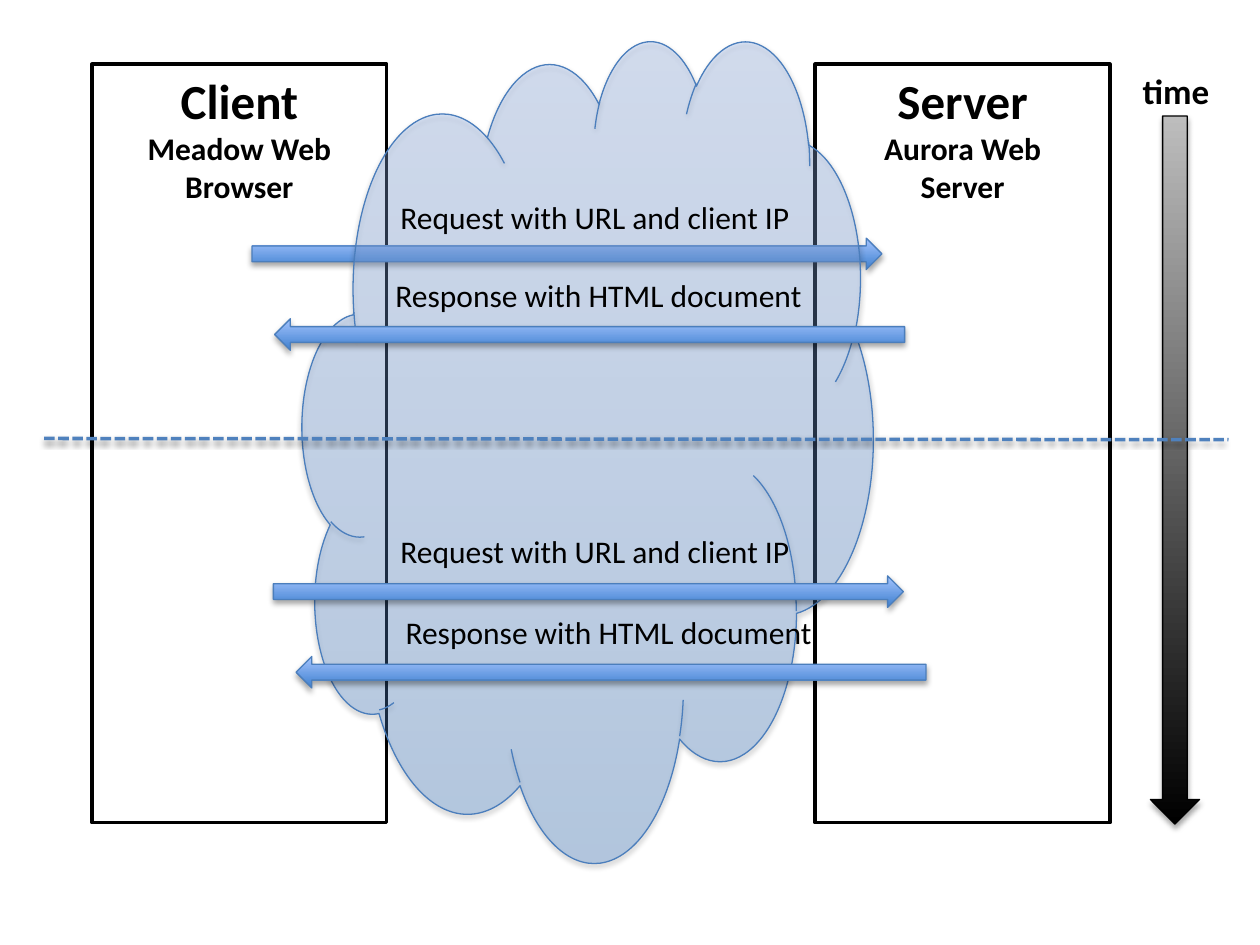
from lxml.etree import SubElement
from pptx import Presentation
from pptx.dml.color import RGBColor
from pptx.enum.dml import MSO_LINE
from pptx.enum.shapes import MSO_CONNECTOR, MSO_SHAPE
from pptx.enum.text import MSO_ANCHOR, PP_ALIGN
from pptx.oxml.ns import qn
from pptx.util import Inches, Pt

THEME = {
    "font": "Calibri",
    "ink": "000000",
    "paper": "FFFFFF",
    "blue_line": "4B7EBC",
    "divider": "4F81BD",
    "blue_gradient": ("3F80CE", "A4C4FF"),
    "time_gradient": ("000000", "BDBDBD"),
    "heading": 28,
    "body": 18,
    "time": 20,
}

HOSTS = [
    ("Client", "Meadow Web Browser", 0.73),
    ("Server", "Aurora Web\vServer", 6.47),
]
REQUEST = "Request with URL and client IP"
RESPONSE = "Response with HTML document"
RIGHT, LEFT = MSO_SHAPE.RIGHT_ARROW, MSO_SHAPE.LEFT_ARROW
FIRST_MESSAGE = (REQUEST, RIGHT, (2, 1.89), (3.08, 1.52, 3.73))
LATER_MESSAGES = [
    (RESPONSE, LEFT, (2.18, 2.53), (3.04, 2.14, 4.11)),
    (REQUEST, RIGHT, (2.17, 4.57), (3.08, 4.17, 3.73)),
    (RESPONSE, LEFT, (2.35, 5.21), (3.12, 4.82, 4.11)),
]
HOST_TOP, HOST_WIDTH, HOST_HEIGHT = 0.51, 2.34, 6.02
ARROW_SIZE = (5, 0.25)
LABEL_HEIGHT = 0.4


def color(name):
    return RGBColor.from_string(name)


def write(paragraph, text, size, bold=False, align=PP_ALIGN.LEFT):
    paragraph.text = text
    paragraph.alignment = align
    for span in paragraph.runs:
        span.font.name = THEME["font"]
        span.font.size = Pt(size)
        span.font.bold = bold
        span.font.color.rgb = color(THEME["ink"])


def add_label(page, text, box, size=THEME["body"], bold=False, wrap=True):
    label = page.shapes.add_textbox(*map(Inches, box))
    label.text_frame.word_wrap = wrap
    write(label.text_frame.paragraphs[0], text, size, bold)


def set_line(shape, line_color, width):
    shape.line.color.rgb = color(line_color)
    shape.line.width = Pt(width)


def add_shadow(shape, opacity=35, distance=1.8):
    effects = SubElement(shape._element.spPr, qn("a:effectLst"))
    shadow = SubElement(effects, qn("a:outerShdw"), blurRad=str(Pt(3.1)),
                        dist=str(Pt(distance)), dir="5400000", rotWithShape="0")
    tint = SubElement(shadow, qn("a:srgbClr"), val=THEME["ink"])
    SubElement(tint, qn("a:alpha"), val=str(opacity * 1000))


def add_gradient_shape(page, kind, box, gradient="blue_gradient",
                       line="blue_line", opacity=100):
    shape = page.shapes.add_shape(kind, *map(Inches, box))
    shape.fill.gradient()
    shape.fill.gradient_angle = 90
    for stop, name in zip(shape.fill.gradient_stops, THEME[gradient]):
        stop.color.rgb = color(name)
    if opacity < 100:
        for tint in shape._element.spPr.iter(qn("a:srgbClr")):
            SubElement(tint, qn("a:alpha"), val=str(opacity * 1000))
    set_line(shape, THEME[line], 0.75)
    add_shadow(shape)


def add_host(page, name, software, left):
    box = (left, HOST_TOP, HOST_WIDTH, HOST_HEIGHT)
    host = page.shapes.add_shape(MSO_SHAPE.RECTANGLE, *map(Inches, box))
    host.fill.solid()
    host.fill.fore_color.rgb = color(THEME["paper"])
    set_line(host, THEME["ink"], 2)
    host.shadow.inherit = False
    frame = host.text_frame
    frame.word_wrap = True
    frame.vertical_anchor = MSO_ANCHOR.TOP
    centred = {"bold": True, "align": PP_ALIGN.CENTER}
    write(frame.paragraphs[0], name, THEME["heading"], **centred)
    write(frame.add_paragraph(), software, THEME["body"], **centred)


def add_message_arrow(page, message):
    add_gradient_shape(page, message[1], message[2] + ARROW_SIZE)


def add_message_label(page, message):
    add_label(page, message[0], message[3] + (LABEL_HEIGHT,))


def add_divider(page):
    ends = map(Inches, (0.35, 3.48, 9.75, 3.49))
    divider = page.shapes.add_connector(MSO_CONNECTOR.STRAIGHT, *ends)
    set_line(divider, THEME["divider"], 2)
    divider.line.dash_style = MSO_LINE.SQUARE_DOT
    add_shadow(divider, opacity=38, distance=1.6)


def main():
    deck = Presentation()
    deck.slide_width, deck.slide_height = Inches(10), Inches(7.5)
    page = deck.slides.add_slide(deck.slide_layouts[6])
    for host in HOSTS:
        add_host(page, *host)
    add_message_arrow(page, FIRST_MESSAGE)
    add_gradient_shape(page, MSO_SHAPE.CLOUD, (2.4, 0.31, 4.53, 6.52), opacity=30)
    add_message_label(page, FIRST_MESSAGE)
    for message in LATER_MESSAGES:
        add_message_arrow(page, message)
        add_message_label(page, message)
    add_gradient_shape(page, MSO_SHAPE.DOWN_ARROW, (9.13, 0.92, 0.39, 5.62),
                       gradient="time_gradient", line="ink")
    add_label(page, "time", (8.97, 0.5, 0.78, 0.44), THEME["time"],
              bold=True, wrap=False)
    add_divider(page)
    deck.save("out.pptx")


if __name__ == "__main__":
    main()
